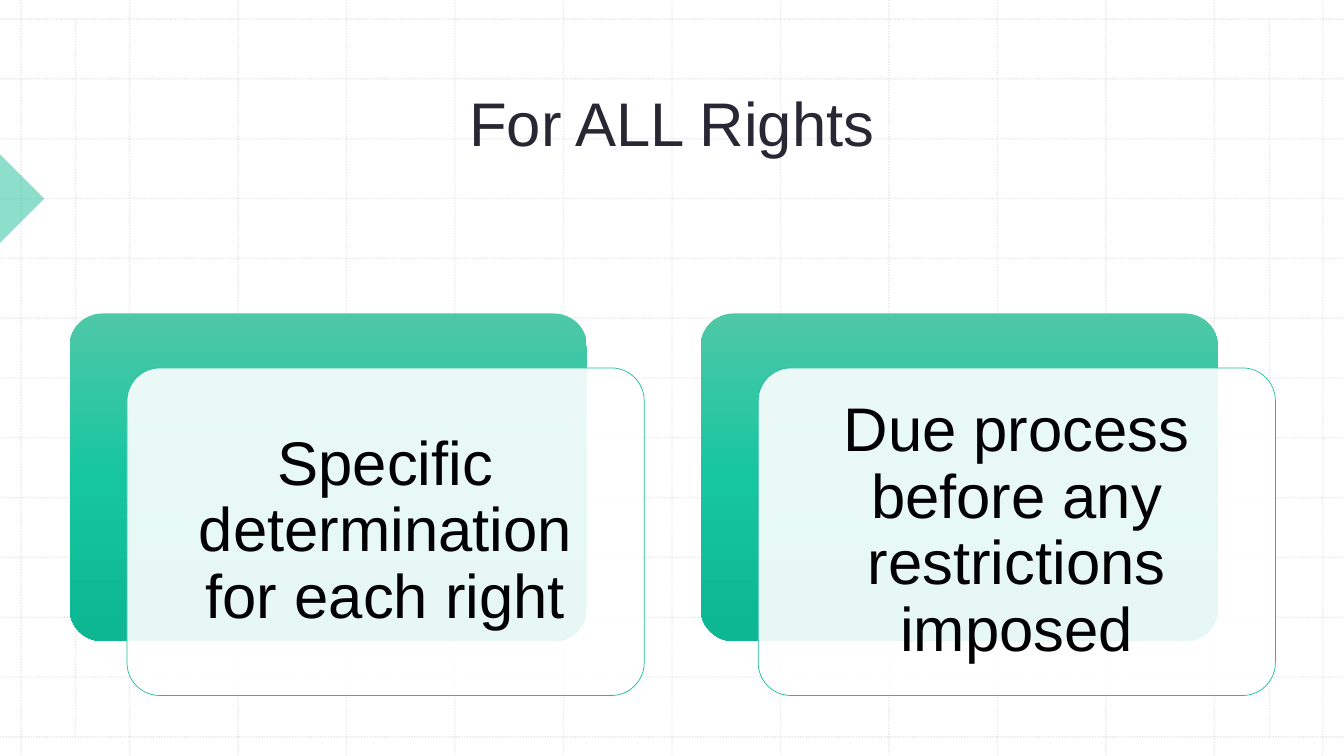
from copy import deepcopy

from lxml.etree import SubElement
from pptx import Presentation
from pptx.dml.color import RGBColor
from pptx.enum.dml import MSO_LINE
from pptx.enum.shapes import MSO_CONNECTOR, MSO_SHAPE
from pptx.enum.text import MSO_ANCHOR, PP_ALIGN
from pptx.oxml.ns import qn
from pptx.util import Inches, Pt


def rgb(value):
    return RGBColor.from_string(value)


def set_alpha(element, percent):
    """Give every colour inside an element the same opacity."""
    for color in element.iter(qn("a:srgbClr")):
        SubElement(color, qn("a:alpha")).set("val", str(percent * 1000))


def write(tf, text, size=44, color="000000", font="Arial", spacing=1.0, inset=0.1):
    tf.word_wrap = True
    tf.vertical_anchor = MSO_ANCHOR.MIDDLE
    tf.margin_left = tf.margin_right = Inches(inset)
    tf.margin_top = tf.margin_bottom = Inches(inset)
    p = tf.paragraphs[0]
    p.alignment = PP_ALIGN.CENTER
    p.line_spacing = spacing
    r = p.add_run()
    r.text = text
    r.font.size = Pt(size)
    r.font.name = font
    r.font.color.rgb = rgb(color)


class Deck:
    """Holds the style and the current slide."""

    width, height = 13.33, 7.5
    accent, ink, grid_color = "1EBE9B", "2A2735", "BCBCBC"
    gradient = ((0, "4EC8A7"), (0.5, "16C6A0"), (1, "0CB792"))

    def __init__(self):
        self.prs = Presentation()
        self.prs.slide_width = Inches(self.width)
        self.prs.slide_height = Inches(self.height)
        self.s = self.prs.slides.add_slide(self.prs.slide_layouts[5])

    def grid_line(self, x1, y1, x2, y2):
        line = self.s.shapes.add_connector(
            MSO_CONNECTOR.STRAIGHT, Inches(x1), Inches(y1), Inches(x2), Inches(y2))
        line.line.color.rgb = rgb(self.grid_color)
        line.line.width = Pt(1)
        line.line.dash_style = MSO_LINE.ROUND_DOT
        sp_pr = line.element.spPr
        set_alpha(sp_pr, 30)
        SubElement(sp_pr, qn("a:effectLst"))

    def grid(self, cells=12, left=0.21, right=13.12, top=0.19, bottom=7.31):
        for i in range(cells + 1):
            x = left + i * (right - left) / cells
            y = top + i * (bottom - top) / cells
            self.grid_line(x, 0, x, self.height)
            self.grid_line(0, y, self.width, y)
        for x in (0.75, 12.59):
            self.grid_line(x, top, x, bottom)

    def shape(self, kind, left, top, width, height):
        sp = self.s.shapes.add_shape(
            kind, Inches(left), Inches(top), Inches(width), Inches(height))
        sp.shadow.inherit = False
        sp.line.fill.background()
        return sp

    def solid(self, sp, color, opacity):
        sp.fill.solid()
        sp.fill.fore_color.rgb = rgb(color)
        set_alpha(sp.element.spPr, opacity)

    def marker(self):
        sp = self.shape(MSO_SHAPE.RIGHT_TRIANGLE, -0.31, 1.66, 0.62, 0.62)
        sp.rotation = 225
        self.solid(sp, self.accent, 50)

    def title(self, text):
        sp = self.s.shapes.title
        sp.left, sp.top = Inches(1.18), Inches(0.59)
        sp.width, sp.height = Inches(10.97), Inches(1.23)
        write(sp.text_frame, text, color=self.ink)
        sp.element.getparent().append(sp.element)  # in front of the grid

    def rounded(self, left, top):
        sp = self.shape(MSO_SHAPE.ROUNDED_RECTANGLE, left, top, 5.13, 3.25)
        sp.adjustments[0] = 0.1
        return sp

    def card(self, left, top, text):
        """Gradient panel with a translucent text panel offset over it."""
        back = self.rounded(left, top)
        back.fill.gradient()
        back.fill.gradient_angle = 270
        stops = back.element.spPr.find(".//" + qn("a:gsLst"))
        stops.insert(1, deepcopy(stops[0]))
        for stop, (position, color) in zip(back.fill.gradient_stops, self.gradient):
            stop.position = position
            stop.color.rgb = rgb(color)

        front = self.rounded(left + 0.57, top + 0.54)
        self.solid(front, "FFFFFF", 90)
        front.line.color.rgb = rgb(self.accent)
        front.line.width = Pt(0.5)
        write(front.text_frame, text, spacing=0.9, inset=0.18)


def main():
    deck = Deck()
    deck.grid()
    deck.marker()
    deck.title("For ALL Rights")
    cards = ("Specific determination for each right",
             "Due process before any restrictions imposed")
    for i, text in enumerate(cards):
        deck.card(0.69 + i * 6.26, 3.11, text)
    deck.prs.save("out.pptx")


if __name__ == "__main__":
    main()
